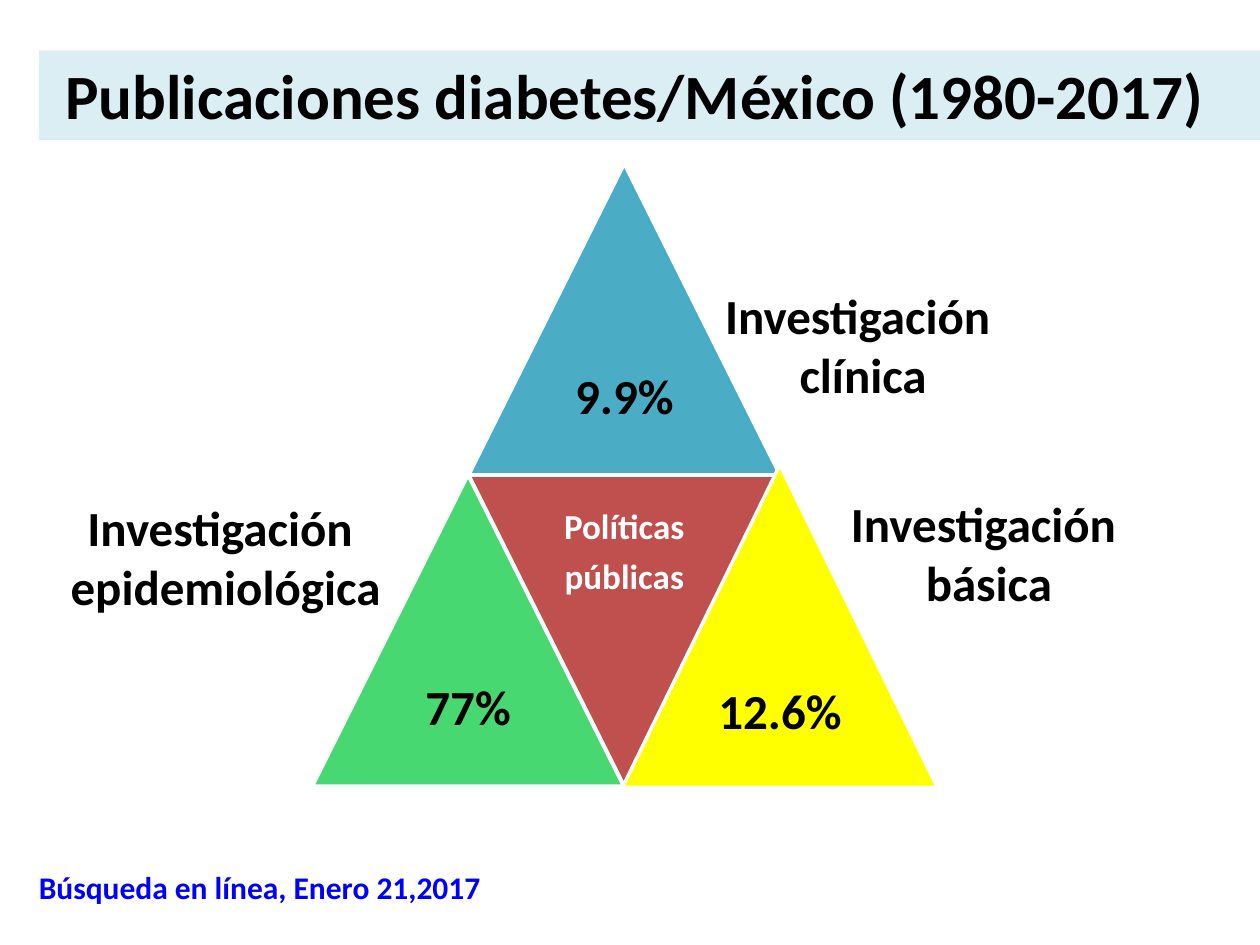
"""Build a slide on diabetes publications in Mexico as a split triangle."""
from pptx import Presentation, util as u
from pptx.dml.color import RGBColor
from pptx.enum import shapes, text as t

HUES = {"band": "DBEEF4", "ink": "000000", "note": "0000FF", "white": "FFFFFF",
        "blue": "4BACC6", "green": "47D872", "red": "C0504D", "yellow": "FFFF00"}


def tint(name):
    return RGBColor.from_string(HUES[name])


def write(shape, lines, size=28, hue="ink", align=t.PP_ALIGN.CENTER,
          anchor=t.MSO_ANCHOR.TOP, inset=None, lead=None, after=0):
    frame = shape.text_frame
    frame.word_wrap = True
    frame.auto_size = t.MSO_AUTO_SIZE.NONE
    frame.vertical_anchor = anchor
    if inset is not None:
        frame.margin_left = frame.margin_right = u.Inches(inset)
        frame.margin_top = frame.margin_bottom = u.Inches(inset)
    for i, line in enumerate(lines):
        para = frame.paragraphs[0] if i == 0 else frame.add_paragraph()
        para.alignment = align
        para.line_spacing = lead
        para.space_before = u.Pt(0)
        para.space_after = u.Pt(after)
        run = para.add_run()
        run.text = line
        run.font.name = "Calibri"
        run.font.size = u.Pt(size)
        run.font.bold = True
        run.font.color.rgb = tint(hue)


deck = Presentation()
deck.slide_width, deck.slide_height = u.Inches(10), u.Inches(7.5)
slide = deck.slides.add_slide(deck.slide_layouts[5])

title = slide.shapes.title
title.left, title.top = u.Inches(0.31), u.Inches(0.4)
title.width, title.height = u.Inches(9.69), u.Inches(0.71)
title.fill.solid()
title.fill.fore_color.rgb = tint("band")
write(title, ["Publicaciones diabetes/México (1980-2017)"], size=36, align=t.PP_ALIGN.LEFT)
title.text_frame.margin_left = u.Inches(0.21)

note = slide.shapes.add_textbox(u.Inches(0.21), u.Inches(6.84), u.Inches(4), u.Inches(0.4))
write(note, ["Búsqueda en línea, Enero 21,2017"], size=18, hue="note", align=t.PP_ALIGN.LEFT)

parts = [
    (3.72, 1.3, 2.47, 2.47, "blue", 0, 2.54, ["9.9%"], 28, "ink", 0.12),
    (2.48, 3.77, 2.47, 2.47, "green", 0, 5.01, ["77%"], 28, "ink", 0.12),
    (3.72, 3.77, 2.47, 2.47, "red", 180, 3.77, ["Políticas", "públicas"], 20, "white", 0.08),
    (4.94, 3.69, 2.5, 2.56, "yellow", 0, 5.04, ["12.6%"], 28, "ink", 0.12),
]
for left, top, wide, high, hue, turn, y, lines, size, ink, inset in parts:
    tri = slide.shapes.add_shape(shapes.MSO_SHAPE.ISOSCELES_TRIANGLE, u.Inches(left),
                                 u.Inches(top), u.Inches(wide), u.Inches(high))
    tri.shadow.inherit = False
    tri.rotation = turn
    tri.fill.solid()
    tri.fill.fore_color.rgb = tint(hue)
    tri.line.color.rgb = tint("white")
    tri.line.width = u.Pt(2)
    box = slide.shapes.add_textbox(u.Inches(left + wide / 4), u.Inches(y),
                                   u.Inches(wide / 2), u.Inches(1.24))
    write(box, lines, size=size, hue=ink, anchor=t.MSO_ANCHOR.MIDDLE,
          inset=inset, lead=0.9, after=size * 0.35)

labels = [
    (4.84, 2.22, 4.02, ["Investigación ", "clínica"]),
    (0.1, 3.9, 3.38, ["Investigación ", "epidemiológica"]),
    (5.61, 3.87, 4.39, ["Investigación", " básica"]),
]
for left, top, wide, lines in labels:
    box = slide.shapes.add_textbox(u.Inches(left), u.Inches(top), u.Inches(wide), u.Inches(1.04))
    write(box, lines)

deck.save("out.pptx")
